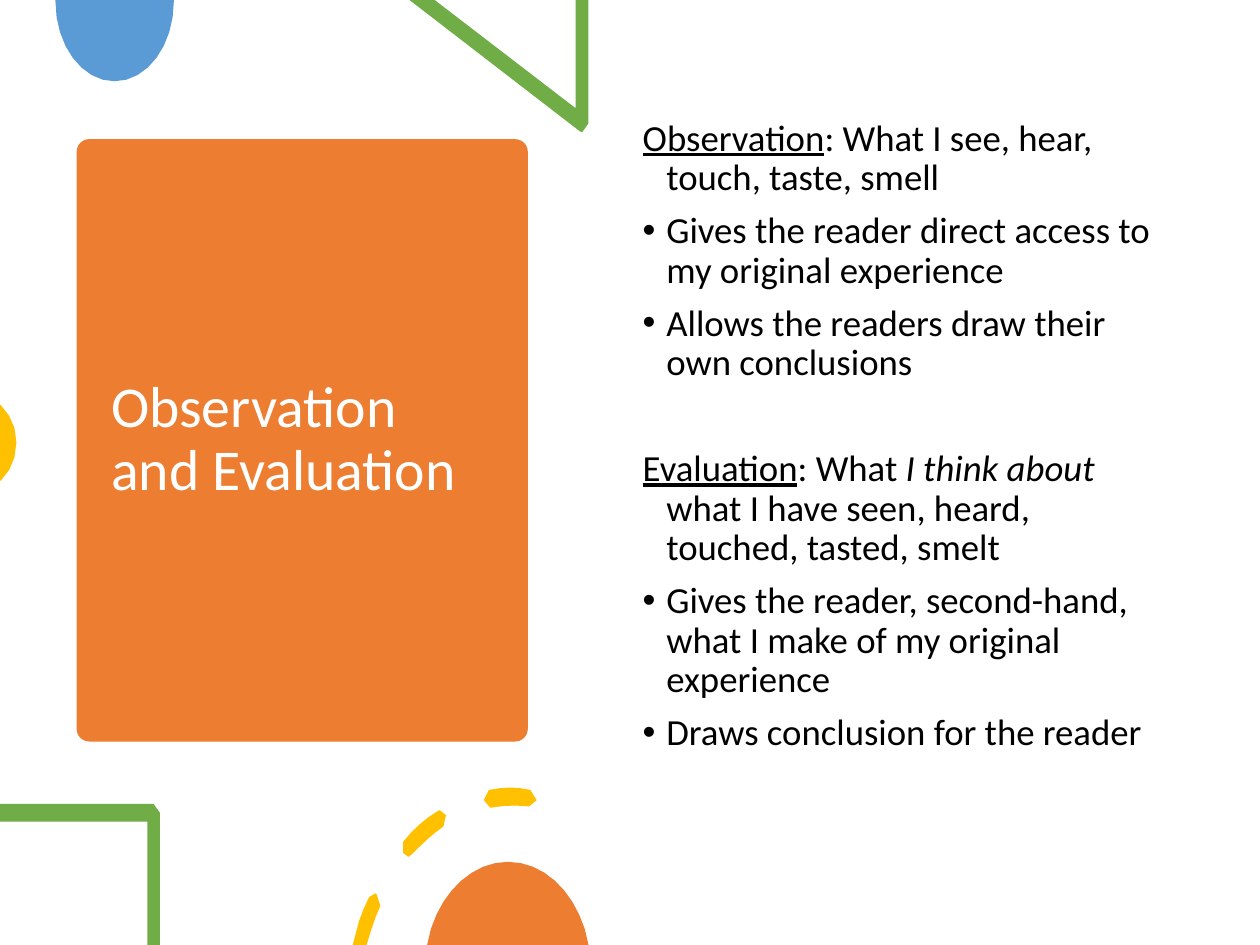
import dataclasses
import math

import lxml.etree
import pptx
import pptx.dml.color
import pptx.enum.shapes
import pptx.enum.text
import pptx.oxml.ns
import pptx.util

Pt = pptx.util.Pt
SHAPES = pptx.enum.shapes.MSO_SHAPE
ALIGN = pptx.enum.text.PP_ALIGN
ANCHOR = pptx.enum.text.MSO_ANCHOR
FIT = pptx.enum.text.MSO_AUTO_SIZE


@dataclasses.dataclass(frozen=True)
class Theme:
    font: str = "Calibri"
    white: str = "FFFFFF"
    black: str = "000000"
    blue: str = "5B9BD5"
    green: str = "70AD47"
    yellow: str = "FFC000"
    orange: str = "ED7D31"
    title_size: float = 33
    body_size: float = 21
    line_spacing: float = 0.9
    para_gap: float = 7.5
    section_gap: float = 37.7
    indent: float = 13.5


THEME = Theme()

BLUE_DISC = [[(67.7, 0), (0, 0), (0, 0.7), (0, 25.9, 15.1, 46.5, 33.8, 46.5),
              (52.6, 46.5, 67.7, 25.9, 67.7, 0.7)]]
GREEN_TRIANGLE = [[(102.2, 0), (95, 0), (95, 61.9), (14.4, 0), (0, 0), (97.2, 74.9),
                   (97.9, 75.6, 97.9, 75.6, 98.6, 75.6),
                   (100.8, 75.6, 102.2, 73.4, 102.2, 70.6)]]
YELLOW_DISC = [[(0, 0), (0, 43.9), (0.7, 43.2), (5.8, 38.2, 9.4, 31, 9.4, 21.6),
                (9.4, 13, 5.8, 5.8, 0.7, 0.7)]]
GREEN_FRAME = [[(87.8, 0), (0, 0), (0, 10.1), (84.2, 10.1), (84.2, 80.6),
                (91.4, 80.6), (91.4, 5), (91.4, 2.2, 90, 0, 87.8, 0)]]
YELLOW_DASHES = [
    [(13, 60.5), (11.5, 59.8, 10.1, 61.2, 9.4, 62.6), (7.2, 67, 5, 72, 3.6, 76.3),
     (0, 90), (7.9, 90), (10.8, 80.6), (12.2, 76.3, 13.7, 72, 15.8, 67.7),
     (16.6, 65.5, 15.8, 61.9, 13.7, 61.2), (13.7, 60.5, 13, 60.5, 13, 60.5)],
    [(49.7, 13), (49, 13, 49, 13, 48.2, 13.7), (41, 18, 34.6, 23.8, 28.8, 31),
     (27.4, 32.4, 27.4, 36, 28.8, 37.4), (29.5, 38.9, 30.2, 39.6, 31.7, 39.6),
     (32.4, 39.6, 33.1, 38.9, 33.8, 38.2), (39.6, 32.4, 45.4, 26.6, 51.8, 22.3),
     (53.3, 20.9, 54, 18, 53.3, 15.8), (52.6, 13.7, 51.1, 13, 49.7, 13)],
    [(90, 0), (85.7, 0, 82.1, 0.7, 77.8, 1.4), (76.3, 1.4, 74.9, 4.3, 74.9, 7.2),
     (74.9, 9.4, 76.3, 11.5, 78.5, 11.5), (79.2, 11.5),
     (86.4, 10.1, 93.6, 10.1, 100.8, 10.8), (103, 11.5, 104.4, 9.4, 105.1, 7.2),
     (105.1, 4.3, 103.7, 1.4, 101.5, 1.4), (97.9, 0.7, 93.6, 0, 90, 0)],
]
ORANGE_DISC = [[(46.1, 0), (26.6, 0, 9.4, 15.8, 2.2, 38.2), (0, 47.5), (92.2, 47.5),
                (90, 38.2), (82.8, 15.8, 66.2, 0, 46.1, 0)]]

TOP_DECORATIONS = [
    ((31.7, 0), BLUE_DISC, THEME.blue),
    ((234, 0), GREEN_TRIANGLE, THEME.green),
    ((0, 231.1), YELLOW_DISC, THEME.yellow),
]
BOTTOM_DECORATIONS = [
    ((0, 459.4), GREEN_FRAME, THEME.green),
    ((201.6, 450), YELLOW_DASHES, THEME.yellow),
    ((244.1, 492.5), ORANGE_DISC, THEME.orange),
]

UNDERLINE = {"underline": True}
ITALIC = {"italic": True}
NOTES = [
    (False, THEME.para_gap, [("Observation", UNDERLINE),
                             (": What I see, hear, touch, taste, smell", {})]),
    (True, THEME.para_gap,
     [("Gives the reader direct access to my original experience", {})]),
    (True, THEME.para_gap, [("Allows the readers draw their own conclusions", {})]),
    (False, THEME.section_gap, [("Evaluation", UNDERLINE), (": What ", {}),
                                ("I think about", ITALIC),
                                (" what I have seen, heard, touched, tasted, smelt", {})]),
    (True, THEME.para_gap,
     [("Gives the reader, second-hand, what I make of my original experience", {})]),
    (True, THEME.para_gap, [("Draws conclusion for the reader", {})]),
]


def set_values(target, values):
    for name, value in values.items():
        setattr(target, name, value)


def paint(shape, color):
    shape.shadow.inherit = False
    shape.fill.solid()
    shape.fill.fore_color.rgb = pptx.dml.color.RGBColor.from_string(color)
    shape.line.fill.background()


def add_span(para, text, size, color, extra):
    span = para.add_run()
    span.text = text
    set_values(span.font, {"name": THEME.font, "size": Pt(size), **extra})
    span.font.color.rgb = pptx.dml.color.RGBColor.from_string(color)


def flatten(contour, stride=8):
    points = [contour[0]]
    for segment in contour[1:]:
        if len(segment) == 2:
            points.append(segment)
            continue
        start, (one, two, end) = points[-1], zip(segment[::2], segment[1::2])
        steps = max(1, math.ceil(math.dist(start, end) / stride))
        for step in range(1, steps + 1):
            t = step / steps
            u = 1 - t
            points.append(tuple(
                u**3 * a + 3 * u**2 * t * b + 3 * u * t**2 * c + t**3 * d
                for a, b, c, d in zip(start, one, two, end)))
    return [(x * 100, y * 100) for x, y in points]


def add_decoration(page, corner, contours, color):
    outlines = [flatten(contour) for contour in contours]
    builder = page.shapes.build_freeform(*outlines[0][0], scale=Pt(1) / 100)
    for index, points in enumerate(outlines):
        if index:
            builder.move_to(*points[0])
        builder.add_line_segments(points[1:], close=True)
    paint(builder.convert_to_shape(*map(Pt, corner)), color)


def add_backdrop(page, box):
    backdrop = page.shapes.add_shape(SHAPES.RECTANGLE, *map(Pt, box))
    page.shapes.title.element.addprevious(backdrop.element)
    paint(backdrop, THEME.white)


def add_title_card(page, box):
    left, top, width, height = box
    card = page.shapes.add_shape(SHAPES.ROUNDED_RECTANGLE, *map(Pt, box))
    card.adjustments[0] = 0.028
    paint(card, THEME.orange)
    title = page.shapes.title
    title.element.addprevious(card.element)
    set_values(title, {"left": Pt(left + 12.5), "top": Pt(top + 8),
                       "width": Pt(width - 25), "height": Pt(height - 16)})
    set_values(title.text_frame, {"word_wrap": True, "auto_size": FIT.NONE,
                                  "vertical_anchor": ANCHOR.MIDDLE})
    para = title.text_frame.paragraphs[0]
    set_values(para, {"alignment": ALIGN.LEFT, "line_spacing": THEME.line_spacing})
    add_span(para, "Observation and Evaluation", THEME.title_size, THEME.white, {})


def add_notes(page, box):
    frame = page.shapes.add_textbox(*map(Pt, box)).text_frame
    set_values(frame, {"word_wrap": True, "auto_size": FIT.NONE,
                       "vertical_anchor": ANCHOR.TOP})
    for index, (bulleted, gap, spans) in enumerate(NOTES):
        para = frame.add_paragraph() if index else frame.paragraphs[0]
        set_values(para, {"alignment": ALIGN.LEFT, "space_before": Pt(gap),
                          "line_spacing": THEME.line_spacing})
        properties = para._p.get_or_add_pPr()
        properties.set("marL", str(Pt(THEME.indent)))
        properties.set("indent", str(-Pt(THEME.indent)))
        if bulleted:
            qn = pptx.oxml.ns.qn
            lxml.etree.SubElement(properties, qn("a:buFont")).set("typeface", "Arial")
            lxml.etree.SubElement(properties, qn("a:buChar")).set("char", "•")
        for text, extra in spans:
            add_span(para, text, THEME.body_size, THEME.black, extra)


def main():
    deck = pptx.Presentation()
    set_values(deck, {"slide_width": Pt(720), "slide_height": Pt(540)})
    page = deck.slides.add_slide(deck.slide_layouts[5])
    add_backdrop(page, (0, 0, 720, 540))
    add_title_card(page, (43.8, 79.5, 257.8, 344.2))
    for decoration in TOP_DECORATIONS:
        add_decoration(page, *decoration)
    add_notes(page, (360.2, 64.6, 310.3, 385.2))
    for decoration in BOTTOM_DECORATIONS:
        add_decoration(page, *decoration)
    deck.save("out.pptx")


if __name__ == "__main__":
    main()
